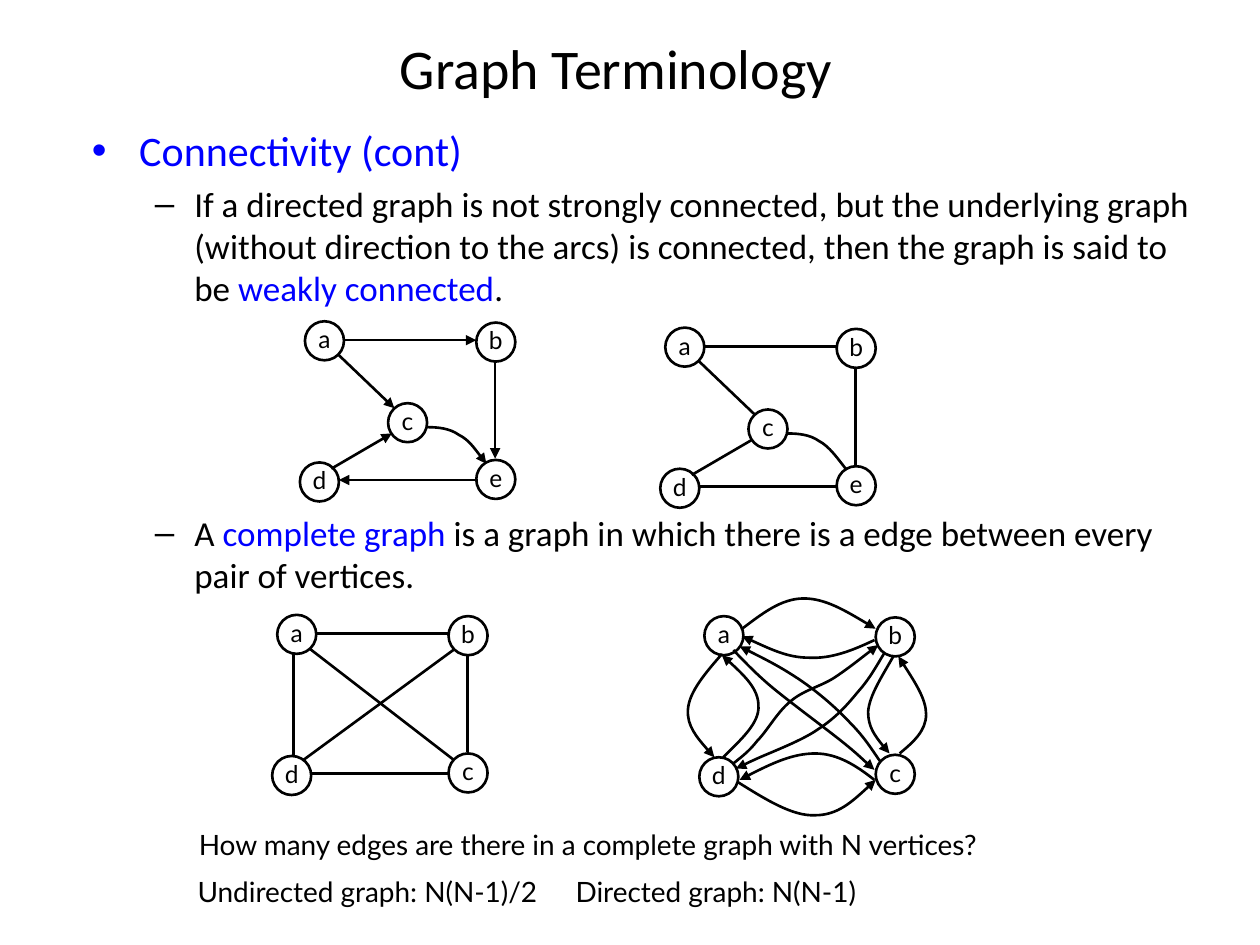
from dataclasses import dataclass

from lxml.etree import SubElement
from pptx import Presentation
from pptx.dml.color import RGBColor
from pptx.enum.shapes import MSO_CONNECTOR as Connector, MSO_SHAPE as Shape
from pptx.enum.text import MSO_ANCHOR as Anchor, MSO_AUTO_SIZE as AutoSize, PP_ALIGN as Align
from pptx.oxml.ns import qn
from pptx.util import Inches, Pt

COLORS = {"ink": "000000", "accent": "0000FF"}
NODE_SIZE = 0.31
LINE_WIDTH = 1.5

Point = tuple[float, float]


@dataclass(frozen=True)
class Graph:
    origin: Point
    nodes: dict[str, Point]
    lines: tuple[tuple[Point, Point], ...]
    curves: tuple[tuple[Point, ...], ...]
    directed: bool

    def place(self, point: Point) -> tuple[Inches, Inches]:
        return Inches(self.origin[0] + point[0]), Inches(self.origin[1] + point[1])


A, B, C, D, E = (0, 0), (1.36, 0.01), (0.66, 0.65), (-0.04, 1.12), (1.36, 1.1)
FIVE_NODES = {"a": A, "b": B, "d": D, "e": E, "c": C}
FOUR_NODES = {"a": A, "b": B, "d": D, "c": E}

FRAME = (
    ((0.3, 0.15), (1.36, 0.15)),
    ((1.37, 1.26), (0.27, 1.26)),
    ((1.51, 0.32), (1.51, 1.09)),
)
CONNECTED_LINES = FRAME + (
    ((0.26, 0.26), (0.71, 0.69)),
    ((0.21, 1.17), (0.69, 0.89)),
)
COMPLETE_LINES = FRAME + (
    ((0.13, 0.3), (0.13, 1.13)),
    ((0.26, 0.27), (1.4, 1.15)),
    ((0.21, 1.15), (1.41, 0.27)),
)
C_TO_E = (
    ((0.97, 0.84), (1.06, 0.84), (1.15, 0.85), (1.22, 0.9), (1.3, 0.94), (1.37, 1.04), (1.44, 1.13)),
)
COMPLETE_CURVES = (
    ((0.3, 0.1), (0.46, -0.02), (0.61, -0.14), (0.79, -0.14), (0.96, -0.14), (1.16, -0.02), (1.36, 0.1)),
    ((1.35, 0.19), (1.18, 0.27), (1.01, 0.34), (0.83, 0.33), (0.66, 0.33), (0.48, 0.24), (0.3, 0.16)),
    ((0.14, 0.3), (0.01, 0.45), (-0.12, 0.6), (-0.13, 0.74), (-0.14, 0.87), (-0.03, 1), (0.08, 1.12)),
    ((0.15, 1.12), (0.29, 0.98), (0.44, 0.85), (0.43, 0.71), (0.43, 0.58), (0.29, 0.44), (0.14, 0.31)),
    ((1.5, 0.32), (1.41, 0.48), (1.31, 0.63), (1.3, 0.76), (1.3, 0.88), (1.38, 0.99), (1.47, 1.09)),
    ((1.55, 1.09), (1.66, 1), (1.76, 0.91), (1.76, 0.78), (1.76, 0.66), (1.65, 0.49), (1.54, 0.32)),
    ((0.27, 1.32), (0.48, 1.45), (0.7, 1.59), (0.88, 1.58), (1.06, 1.58), (1.21, 1.44), (1.36, 1.3)),
    ((1.35, 1.3), (1.21, 1.19), (1.06, 1.09), (0.88, 1.09), (0.7, 1.09), (0.49, 1.19), (0.28, 1.3)),
    ((0.23, 1.17), (0.29, 1.12), (0.35, 1.08), (0.42, 0.99), (0.5, 0.91), (0.58, 0.76), (0.68, 0.68),
     (0.78, 0.59), (0.92, 0.56), (1.03, 0.49), (1.15, 0.41), (1.26, 0.32), (1.38, 0.23)),
    ((1.43, 0.29), (1.37, 0.39), (1.31, 0.5), (1.22, 0.6), (1.13, 0.71), (1.04, 0.81), (0.9, 0.9),
     (0.77, 0.99), (0.53, 1.08), (0.42, 1.13), (0.31, 1.18), (0.28, 1.2), (0.25, 1.21)),
    ((0.23, 0.27), (0.31, 0.35), (0.38, 0.43), (0.52, 0.55), (0.65, 0.66), (0.92, 0.86), (1.06, 0.97),
     (1.2, 1.08), (1.27, 1.15), (1.35, 1.22)),
    ((1.4, 1.16), (1.33, 1.06), (1.27, 0.96), (1.16, 0.85), (1.06, 0.74), (0.9, 0.6), (0.75, 0.5),
     (0.6, 0.4), (0.44, 0.32), (0.28, 0.24)),
)
GRAPHS = (
    Graph((2.42, 2.55), FIVE_NODES, CONNECTED_LINES, C_TO_E, True),
    Graph((5.28, 2.6), FIVE_NODES, CONNECTED_LINES, C_TO_E, False),
    Graph((2.2, 4.88), FOUR_NODES, COMPLETE_LINES, (), False),
    Graph((5.59, 4.89), FOUR_NODES, (), COMPLETE_CURVES, True),
)


def color(name: str) -> RGBColor:
    return RGBColor.from_string(COLORS[name])


def format_font(font, size: float, typeface: str, color_name: str = "ink") -> None:
    font.size, font.name = Pt(size), typeface
    font.color.rgb = color(color_name)


def format_line(shape, arrow: bool = False) -> None:
    shape.line.color.rgb = color("ink")
    shape.line.width = Pt(LINE_WIDTH)
    if arrow:
        SubElement(shape.line._get_or_add_ln(), qn("a:tailEnd"), type="triangle")


def move(shape, left: float, top: float, width: float, height: float) -> None:
    shape.left, shape.top = Inches(left), Inches(top)
    shape.width, shape.height = Inches(width), Inches(height)


def draw_node(slide, graph: Graph, label: str, point: Point) -> None:
    node = slide.shapes.add_shape(Shape.OVAL, *graph.place(point), Inches(NODE_SIZE), Inches(NODE_SIZE))
    node.shadow.inherit = False
    node.fill.background()
    format_line(node)
    frame = node.text_frame
    frame.margin_left = frame.margin_right = frame.margin_top = 0
    frame.margin_bottom = Inches(0.03)
    frame.word_wrap = False
    frame.vertical_anchor = Anchor.MIDDLE
    para = frame.paragraphs[0]
    para.text = label
    para.alignment = Align.CENTER
    format_font(para.runs[0].font, 14, "Lato")


def draw_line(slide, graph: Graph, start: Point, end: Point) -> None:
    line = slide.shapes.add_connector(Connector.STRAIGHT, *graph.place(start), *graph.place(end))
    format_line(line, graph.directed)
    SubElement(line._element.spPr, qn("a:effectLst"))


def draw_curve(slide, graph: Graph, points: tuple[Point, ...]) -> None:
    start, *controls = [graph.place(point) for point in points]
    builder = slide.shapes.build_freeform(*start)
    builder.add_line_segments(controls, close=False)
    curve = builder.convert_to_shape()
    segments = curve._element.xpath(".//a:lnTo")
    for first in range(0, len(segments), 3):
        bezier = SubElement(segments[first].getparent(), qn("a:cubicBezTo"))
        for segment in segments[first:first + 3]:
            bezier.append(segment[0])
            segment.getparent().remove(segment)
    curve.shadow.inherit = False
    curve.fill.background()
    format_line(curve, graph.directed)


def draw_graph(slide, graph: Graph) -> None:
    for label, point in graph.nodes.items():
        draw_node(slide, graph, label, point)
    for start, end in graph.lines:
        draw_line(slide, graph, start, end)
    for points in graph.curves:
        draw_curve(slide, graph, points)


def add_spans(para, size: float, spans: tuple[tuple[str, str], ...]) -> None:
    for text, color_name in spans:
        span = para.add_run()
        span.text = text
        format_font(span.font, size, "Calibri", color_name)


def fill_body(body) -> None:
    move(body, 0.63, 0.94, 8.93, 5.66)
    frame = body.text_frame
    frame.auto_size = AutoSize.NONE
    add_spans(frame.paragraphs[0], 24, (("Connectivity (cont)", "accent"),))
    weak, complete = frame.add_paragraph(), frame.add_paragraph()
    weak.level = complete.level = 1
    add_spans(weak, 20, (
        ("If a directed graph is not strongly connected, but the underlying graph "
         "(without direction to the arcs) is connected, then the graph is said to be ", "ink"),
        ("weakly connected", "accent"),
        (".", "ink"),
    ))
    complete.space_before = Pt(116)
    add_spans(complete, 20, (
        ("A ", "ink"),
        ("complete graph", "accent"),
        (" is a graph in which there is a edge between every pair of vertices.", "ink"),
    ))


def add_note(slide, text: str, left: float, top: float, width: float) -> None:
    box = slide.shapes.add_textbox(Inches(left), Inches(top), Inches(width), Inches(0.37))
    box.text_frame.word_wrap = False
    para = box.text_frame.paragraphs[0]
    para.text = text
    format_font(para.runs[0].font, 16, "Lato")


def main() -> None:
    deck = Presentation()
    deck.slide_width, deck.slide_height = Inches(10), Inches(7.5)
    slide = deck.slides.add_slide(deck.slide_layouts[1])
    title = slide.shapes.title
    move(title, 0.64, 0.2, 8.5, 0.67)
    title.text_frame.text = "Graph Terminology"
    format_font(title.text_frame.paragraphs[0].runs[0].font, 32, "Calibri")
    fill_body(slide.placeholders[1])
    for graph in GRAPHS:
        draw_graph(slide, graph)
    add_note(slide, "How many edges are there in a complete graph with N vertices?", 1.48, 6.52, 6.51)
    add_note(slide, "Undirected graph: N(N-1)/2\tDirected graph: N(N-1)", 1.47, 6.89, 5.47)
    deck.save("out.pptx")


if __name__ == "__main__":
    main()
